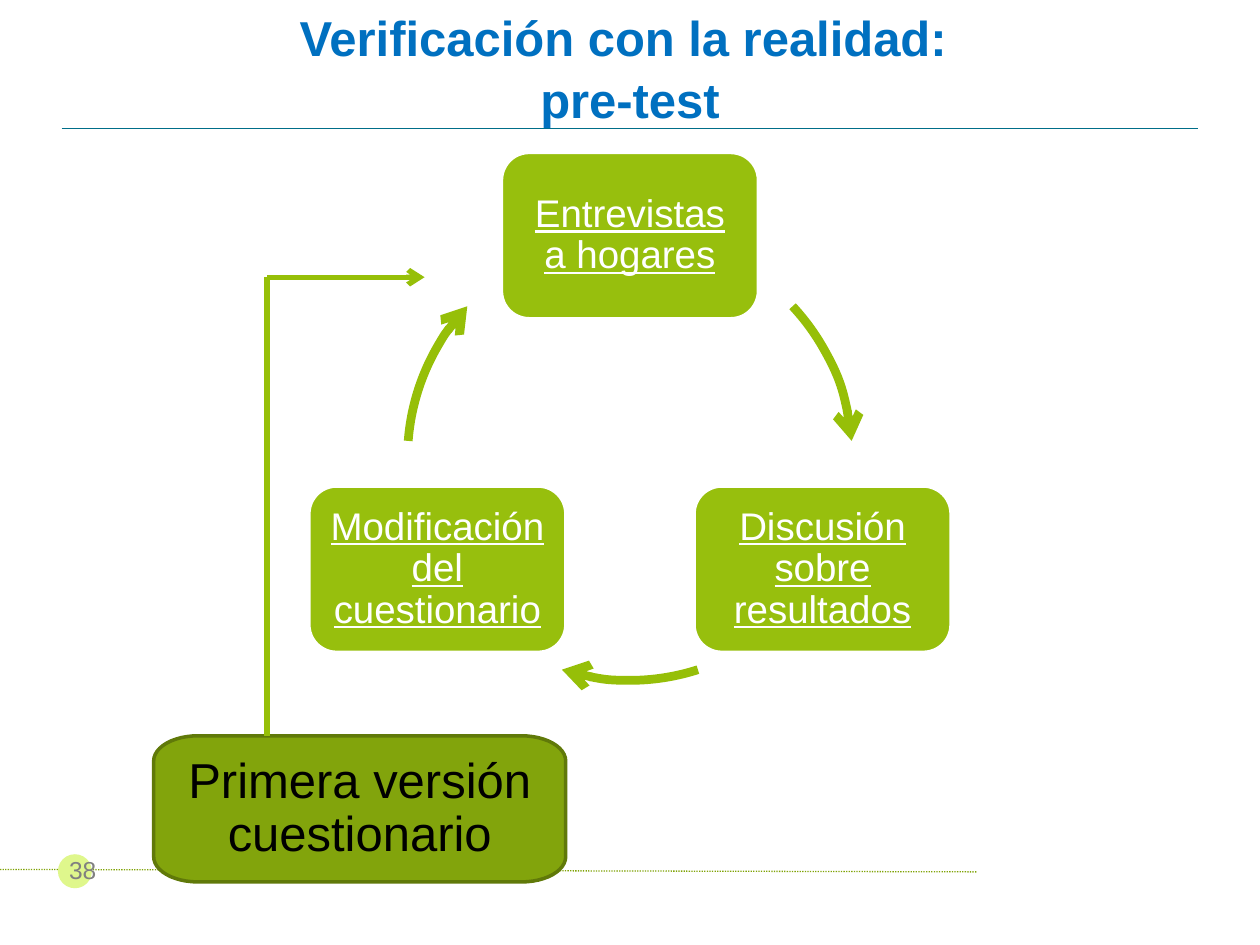
from math import cos, pi, radians, sin

from lxml import etree
from pptx import Presentation
from pptx import util as u
from pptx.dml.color import RGBColor
from pptx.enum import dml, shapes, text
from pptx.oxml import ns

COLORS = {
    "title": "0070C0", "rule": "006E89", "dots": "81A408", "spot": "DFF78C",
    "gray": "808080", "lime": "97BF0D", "arrow": "96BF08", "olive": "82A40C",
    "edge": "607909", "white": "FFFFFF", "black": "000000",
}
CELL = u.Inches(0.1)


def tint(name):
    """Return the named colour."""
    return RGBColor.from_string(COLORS[name])


def grid(*cells):
    """Turn counts of grid cells into lengths."""
    return [round(c * CELL) for c in cells]


def write(shape, words, size=14, color="black", bold=None, under=None,
          align="CENTER", space=None, inset=None):
    """Put formatted text in a shape."""
    frame = shape.text_frame
    frame.word_wrap = True
    frame.vertical_anchor = text.MSO_ANCHOR.MIDDLE
    if inset is not None:
        frame.margin_left = frame.margin_right = u.Inches(inset)
        frame.margin_top = frame.margin_bottom = u.Inches(inset)
    para = frame.paragraphs[0]
    para.text = words
    para.alignment = getattr(text.PP_ALIGN, align)
    para.line_spacing = space
    for run in para.runs:
        font = run.font
        font.name, font.size = "Arial", u.Pt(size)
        font.bold, font.underline = bold, under
        font.color.rgb = tint(color)


class Deck:
    """Draw styled elements on a grid of 100 columns by 75 rows."""

    def __init__(self):
        """Start a deck with one blank slide."""
        self.deck = Presentation()
        self.deck.slide_width, self.deck.slide_height = grid(100, 75)
        self.slide = self.deck.slides.add_slide(self.deck.slide_layouts[6])
        self.shapes = self.slide.shapes

    def paint(self, shape, fill=None, line=None, width=1):
        """Set the fill and outline of a shape."""
        shape.shadow.inherit = False
        if fill:
            shape.fill.solid()
            shape.fill.fore_color.rgb = tint(fill)
        else:
            shape.fill.background()
        if line:
            self.stroke(shape, line, width)
        else:
            shape.line.fill.background()
        return shape

    def stroke(self, shape, color, width, head=False):
        """Set the line of a shape, with an arrowhead if asked."""
        shape.line.color.rgb = tint(color)
        shape.line.width = u.Pt(width)
        if head:
            tail = etree.SubElement(shape.line._get_or_add_ln(), ns.qn("a:tailEnd"))
            tail.set("type", "arrow")

    def label(self, spot, words, **form):
        """Add a text box."""
        write(self.shapes.add_textbox(*grid(*spot)), words, **form)

    def shape(self, kind, spot, **look):
        """Add a preset shape."""
        kind = getattr(shapes.MSO_SHAPE, kind)
        return self.paint(self.shapes.add_shape(kind, *grid(*spot)), **look)

    def line(self, start, end, color, width, head=False, dash=None, group=None):
        """Add a straight line."""
        host = group.shapes if group else self.shapes
        line = host.add_connector(shapes.MSO_CONNECTOR.STRAIGHT, *grid(*start, *end))
        self.stroke(line, color, width, head)
        if dash:
            line.line.dash_style = dash
        etree.SubElement(line._element.spPr, ns.qn("a:effectLst"))

    def arc(self, mid, radius, start, end, color, width):
        """Add a clockwise arc with an arrowhead, angles in degrees."""
        x, y = mid
        arc = self.shape("ARC", (x - radius, y - radius, 2 * radius, 2 * radius))
        for i, angle in enumerate((start, end)):
            arc.adjustments[i] = angle % 360 * 0.6
        self.stroke(arc, color, width, head=True)

    def pill(self, spot, bend, **look):
        """Add a box with elliptical corners."""
        x, y, w, h = spot
        a, b = bend
        hubs = [(x + w - a, y + h - b), (x + a, y + h - b),
                (x + a, y + b), (x + w - a, y + b)]
        dots = []
        for i, (cx, cy) in enumerate(hubs):
            for step in range(13):
                turn = (i + step / 12) * pi / 2
                dots.append(grid(cx + a * cos(turn), cy + b * sin(turn)))
        form = self.shapes.build_freeform(*dots[0])
        form.add_line_segments(dots[1:], close=True)
        return self.paint(form.convert_to_shape(), **look)


def main():
    """Build the slide and save it."""
    deck = Deck()
    deck.line((0, 69), (77.5, 69.2), "dots", 0.75, dash=dml.MSO_LINE.ROUND_DOT)
    deck.shape("OVAL", (4.6, 67.8, 2.7, 2.7), fill="spot")
    deck.line((4.9, 10.2), (95.1, 10.2), "rule", 0.75)
    deck.label((5, 1.8, 90, 7), "Verificación con la realidad: \vpre-test",
               size=28, color="title", bold=True, space=1.05)
    deck.label((4.5, 67, 23.3, 4), "38", color="gray", align="LEFT")

    first = deck.pill((12.2, 58.4, 32.7, 11.6), (3.5, 2),
                      fill="olive", line="edge", width=2)
    write(first, "Primera versión cuestionario", size=28, space=0.9, inset=0.15)
    path = deck.shapes.add_group_shape()
    deck.line((21.2, 58.4), (21.2, 22), "arrow", 3, group=path)
    deck.line((21.2, 22), (33.7, 22), "arrow", 3, head=True, group=path)

    mid, radius = (50, 36.35), 17.65
    wide, high = 20.4, 13.2
    steps = [
        ("Entrevistas a hogares", -90, (-43, -4.4)),
        ("Discusión sobre resultados", 30, (72.2, 107.8)),
        ("Modificación del cuestionario", 150, (184.4, 223)),
    ]
    for words, angle, sweep in steps:
        x = mid[0] + radius * cos(radians(angle))
        y = mid[1] + radius * sin(radians(angle))
        box = deck.shape("ROUNDED_RECTANGLE", (x - wide / 2, y - high / 2, wide, high),
                         fill="lime", line="white", width=2)
        write(box, words, size=22, color="white", under=True, space=0.9, inset=0.09)
        deck.arc(mid, radius, *sweep, "arrow", 5)

    deck.deck.save("out.pptx")


if __name__ == "__main__":
    main()
